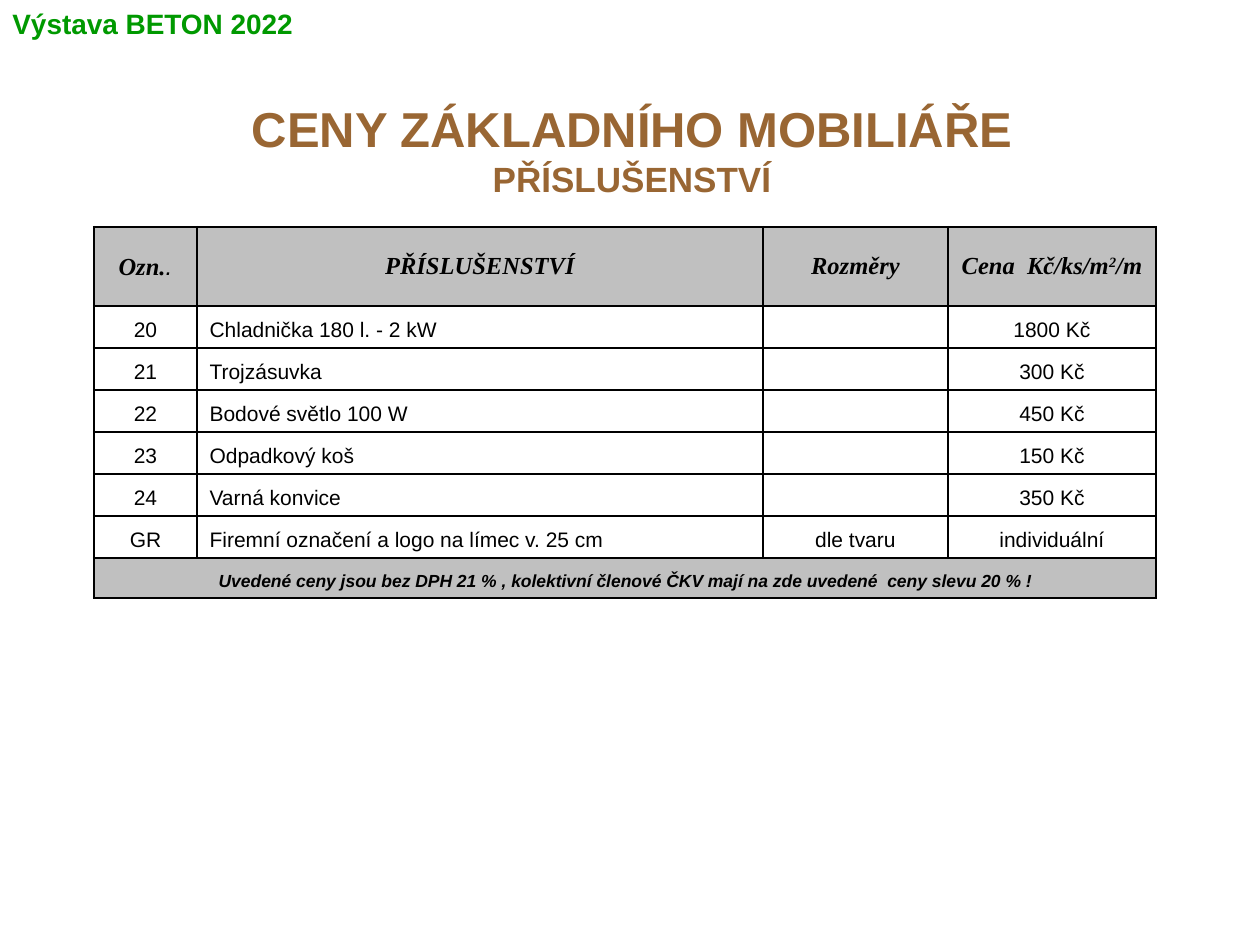
"""Price list of exhibition stand accessories on one slide."""
from lxml.etree import SubElement
from pptx import Presentation
from pptx.dml.color import RGBColor
from pptx.enum.text import MSO_ANCHOR as Anchor, MSO_AUTO_SIZE as AutoSize, PP_ALIGN as Align
from pptx.oxml import parse_xml
from pptx.oxml.ns import nsdecls, qn
from pptx.util import Pt

SCALE = 914400 / 126
BLACK = RGBColor(0x00, 0x00, 0x00)
BROWN = RGBColor(0x99, 0x66, 0x33)
GREEN = RGBColor(0x00, 0x99, 0x00)
GRAY = RGBColor(0xC0, 0xC0, 0xC0)
SERIF = "Times New Roman"

COLUMN_WIDTHS = [103, 566, 185, 208]
ROW_HEIGHTS = [79] + [42] * 6 + [40]
THICK_RULES = {0, 1, 7, 8}
HEADINGS = ["Ozn.", "PŘÍSLUŠENSTVÍ", "Rozměry", "Cena  Kč/ks/m"]
ITEMS = [
    ("20", "Chladnička 180 l. - 2 kW", "", "1800 Kč"),
    ("21", "Trojzásuvka", "", "300 Kč"),
    ("22", "Bodové světlo 100 W", "", "450 Kč"),
    ("23", "Odpadkový koš", "", "150 Kč"),
    ("24", "Varná konvice", "", "350 Kč"),
    ("GR", "Firemní označení a logo na límec v. 25 cm", "dle tvaru", "individuální"),
]
FOOTNOTE = ("Uvedené ceny jsou bez DPH 21 % , kolektivní členové ČKV "
            "mají na zde uvedené  ceny slevu 20 % !")


def px(length):
    return round(length * SCALE)


def write(paragraph, text, size=12, font="Arial", color=BLACK, bold=False,
          italic=False, align=None, raised=False):
    if align is not None:
        paragraph.alignment = align
    if not text:
        SubElement(paragraph._p, qn("a:endParaRPr")).set("sz", str(size * 100))
        return
    run = paragraph.add_run()
    run.text = text
    run.font.size, run.font.name = Pt(size), font
    run.font.bold, run.font.italic = bold, italic
    run.font.color.rgb = color
    if raised:
        run._r.get_or_add_rPr().set("baseline", "30000")


def add_text(slide, left, top, width, height, lines, **style):
    frame = slide.shapes.add_textbox(px(left), px(top), px(width), px(height)).text_frame
    frame.word_wrap = True
    frame.auto_size = AutoSize.SHAPE_TO_FIT_TEXT
    for index, (text, size) in enumerate(lines):
        paragraph = frame.add_paragraph() if index else frame.paragraphs[0]
        write(paragraph, text, size=size, bold=True, **style)


def set_borders(cell, **widths):
    properties = cell._tc.get_or_add_tcPr()
    for index, (side, width) in enumerate(widths.items()):
        properties.insert(index, parse_xml(
            f'<a:ln{side} {nsdecls("a")} w="{Pt(width)}"><a:solidFill>'
            f'<a:srgbClr val="{BLACK}"/></a:solidFill></a:ln{side}>'))


def style_cell(cell, row, column):
    footer = row == len(ROW_HEIGHTS) - 1
    shaded = footer or row == 0
    cell.vertical_anchor = Anchor.MIDDLE if row == 0 else Anchor.BOTTOM
    if shaded:
        cell.fill.solid()
        cell.fill.fore_color.rgb = GRAY
    else:
        cell.fill.background()
    last_column = footer or column == len(COLUMN_WIDTHS) - 1
    set_borders(cell,
                L=1.5 if column == 0 else 1,
                R=1.5 if last_column else 1,
                T=1.5 if row in THICK_RULES else 1,
                B=1.5 if row + 1 in THICK_RULES else 1)


def add_price_table(slide):
    prices = slide.shapes.add_table(
        len(ROW_HEIGHTS), len(COLUMN_WIDTHS), px(94), px(227),
        px(sum(COLUMN_WIDTHS)), px(sum(ROW_HEIGHTS))).table
    prices.first_row = prices.horz_banding = False
    for column, width in zip(prices.columns, COLUMN_WIDTHS):
        column.width = px(width)
    for row, height in zip(prices.rows, ROW_HEIGHTS):
        row.height = px(height)
    footer = len(ROW_HEIGHTS) - 1
    prices.cell(footer, 0).merge(prices.cell(footer, len(COLUMN_WIDTHS) - 1))

    for row in range(len(ROW_HEIGHTS)):
        for column in range(len(COLUMN_WIDTHS)):
            if not prices.cell(row, column).is_spanned:
                style_cell(prices.cell(row, column), row, column)

    header = [prices.cell(0, column).text_frame.paragraphs[0]
              for column in range(len(HEADINGS))]
    heading_style = dict(size=14, font=SERIF, bold=True, italic=True, align=Align.CENTER)
    for paragraph, heading in zip(header, HEADINGS):
        write(paragraph, heading, **heading_style)
    write(header[0], ".", size=14, italic=True)
    write(header[-1], "2", raised=True, **heading_style)
    write(header[-1], "/m", **heading_style)

    for row, item in enumerate(ITEMS, start=1):
        for column, text in enumerate(item):
            write(prices.cell(row, column).text_frame.paragraphs[0], text,
                  align=Align.LEFT if column == 1 else Align.CENTER)
    write(prices.cell(footer, 0).text_frame.paragraphs[0], FOOTNOTE,
          size=10, bold=True, italic=True, align=Align.CENTER)


def main():
    deck = Presentation()
    deck.slide_width, deck.slide_height = px(1260), px(945)
    slide = deck.slides.add_slide(deck.slide_layouts[6])
    add_price_table(slide)
    add_text(slide, 57, 92, 1150, 113,
             [("CENY ZÁKLADNÍHO MOBILIÁŘE", 28), ("PŘÍSLUŠENSTVÍ", 20)],
             color=BROWN, align=Align.CENTER)
    add_text(slide, 0, 0, 333, 47, [("Výstava BETON 2022", 16)], color=GREEN)
    deck.save("out.pptx")


if __name__ == "__main__":
    main()
